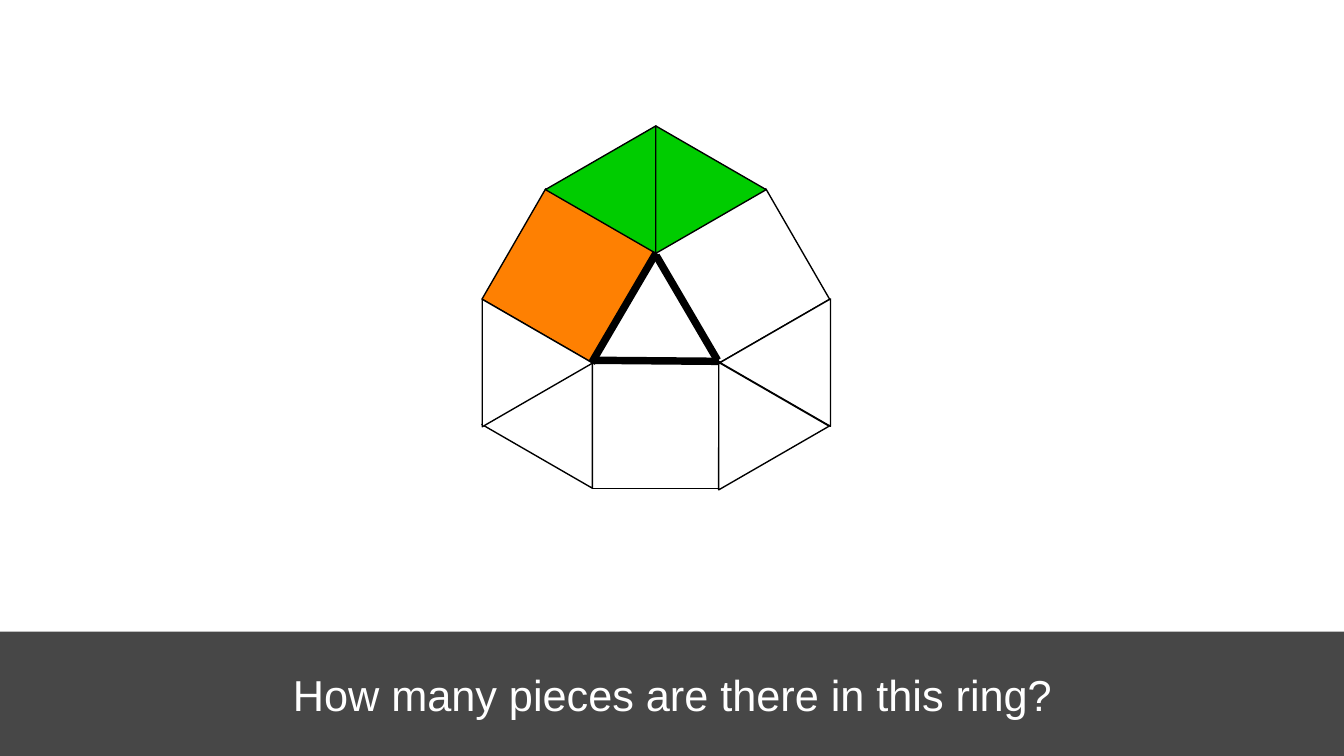
"""Build a slide with a ring of squares and triangles around a bold triangle."""
from dataclasses import dataclass
from math import sqrt

from lxml import etree
from pptx import Presentation
from pptx.dml.color import RGBColor
from pptx.enum.shapes import MSO_CONNECTOR, MSO_SHAPE
from pptx.enum.text import MSO_ANCHOR, MSO_AUTO_SIZE, PP_ALIGN
from pptx.oxml.ns import qn
from pptx.slide import Slide
from pptx.util import Cm, Pt

RECT = MSO_SHAPE.RECTANGLE
TRIANGLE = MSO_SHAPE.ISOSCELES_TRIANGLE
STRAIGHT = MSO_CONNECTOR.STRAIGHT
MIDDLE = MSO_ANCHOR.MIDDLE
CENTER = PP_ALIGN.CENTER
NO_AUTOFIT = MSO_AUTO_SIZE.NONE

BLACK = RGBColor(0x00, 0x00, 0x00)
WHITE = RGBColor(0xFF, 0xFF, 0xFF)
ORANGE = RGBColor(0xFE, 0x80, 0x02)
GREEN = RGBColor(0x00, 0xCC, 0x00)

SLIDE_W, SLIDE_H = 25.4, 14.29
BAR_TOP = 11.94
BAR_H = SLIDE_H - BAR_TOP
EDGE = 2.41
HEIGHTS = {RECT: EDGE, TRIANGLE: EDGE * sqrt(3) / 2}


@dataclass(frozen=True)
class Piece:
    kind: int
    left: float
    top: float
    rotation: int = 0
    color: RGBColor = WHITE


@dataclass(frozen=True)
class Side:
    x1: float
    y1: float
    x2: float
    y2: float


PIECES = [
    Piece(TRIANGLE, 11.2, 4.78),
    Piece(RECT, 12.83, 4.01, 330),
    Piece(RECT, 11.2, 6.83),
    Piece(RECT, 9.55, 4.01, 30, ORANGE),
    Piece(TRIANGLE, 9.47, 6.68, 30),
    Piece(TRIANGLE, 8.43, 6.12, 210),
    Piece(TRIANGLE, 10.67, 2.24, 30, GREEN),
    Piece(TRIANGLE, 11.71, 2.24, 330, GREEN),
    Piece(TRIANGLE, 13.97, 5.51, 30),
    Piece(TRIANGLE, 12.9, 6.71, 330),
]
SIDES = [
    Side(11.2, 6.81, 13.59, 6.83),
    Side(12.4, 4.78, 11.18, 6.86),
    Side(12.4, 4.83, 13.56, 6.81),
]


def add_bar(slide: Slide) -> None:
    """Put the translucent band behind the title."""
    sp = slide.shapes.add_shape(RECT, 0, Cm(BAR_TOP), Cm(SLIDE_W), Cm(BAR_H))
    sp.shadow.inherit = False
    sp.fill.solid()
    sp.fill.fore_color.rgb = BLACK
    sp.line.fill.background()
    color = sp._element.spPr.find(qn("a:solidFill")).find(qn("a:srgbClr"))
    etree.SubElement(color, qn("a:alpha"), val="72000")
    slide.shapes._spTree.insert(2, sp._element)


def add_title(slide: Slide, text: str) -> None:
    """Place and format the title placeholder."""
    sp = slide.shapes.title
    box = {"left": 4.14, "top": BAR_TOP, "width": 17.14, "height": BAR_H}
    for name, value in box.items():
        setattr(sp, name, Cm(value))
    tf = sp.text_frame
    frame = {"word_wrap": True, "auto_size": NO_AUTOFIT, "vertical_anchor": MIDDLE}
    for name, value in frame.items():
        setattr(tf, name, value)
    p = tf.paragraphs[0]
    p.alignment = CENTER
    r = p.add_run()
    r.text = text
    for name, value in {"name": "Arial", "size": Pt(23.2)}.items():
        setattr(r.font, name, value)
    r.font.color.rgb = WHITE


def add_piece(slide: Slide, piece: Piece) -> None:
    """Draw one square or triangle."""
    sp = slide.shapes.add_shape(
        piece.kind, Cm(piece.left), Cm(piece.top), Cm(EDGE), Cm(HEIGHTS[piece.kind])
    )
    sp.rotation = piece.rotation
    sp.shadow.inherit = False
    sp.fill.solid()
    sp.fill.fore_color.rgb = piece.color
    sp.line.color.rgb = BLACK
    sp.line.width = Pt(0.75)


def add_side(slide: Slide, side: Side) -> None:
    """Draw one bold side of the inner triangle."""
    cxn = slide.shapes.add_connector(
        STRAIGHT, Cm(side.x1), Cm(side.y1), Cm(side.x2), Cm(side.y2)
    )
    cxn.line.color.rgb = BLACK
    cxn.line.width = Pt(4)
    etree.SubElement(cxn._element.spPr, qn("a:effectLst"))


def main() -> None:
    """Build and save the presentation."""
    prs = Presentation()
    prs.slide_width, prs.slide_height = Cm(SLIDE_W), Cm(SLIDE_H)
    slide = prs.slides.add_slide(prs.slide_layouts.get_by_name("Title Only"))
    add_bar(slide)
    add_title(slide, "How many pieces are there in this ring?")
    for piece in PIECES:
        add_piece(slide, piece)
    for side in SIDES:
        add_side(slide, side)
    prs.save("out.pptx")


if __name__ == "__main__":
    main()
